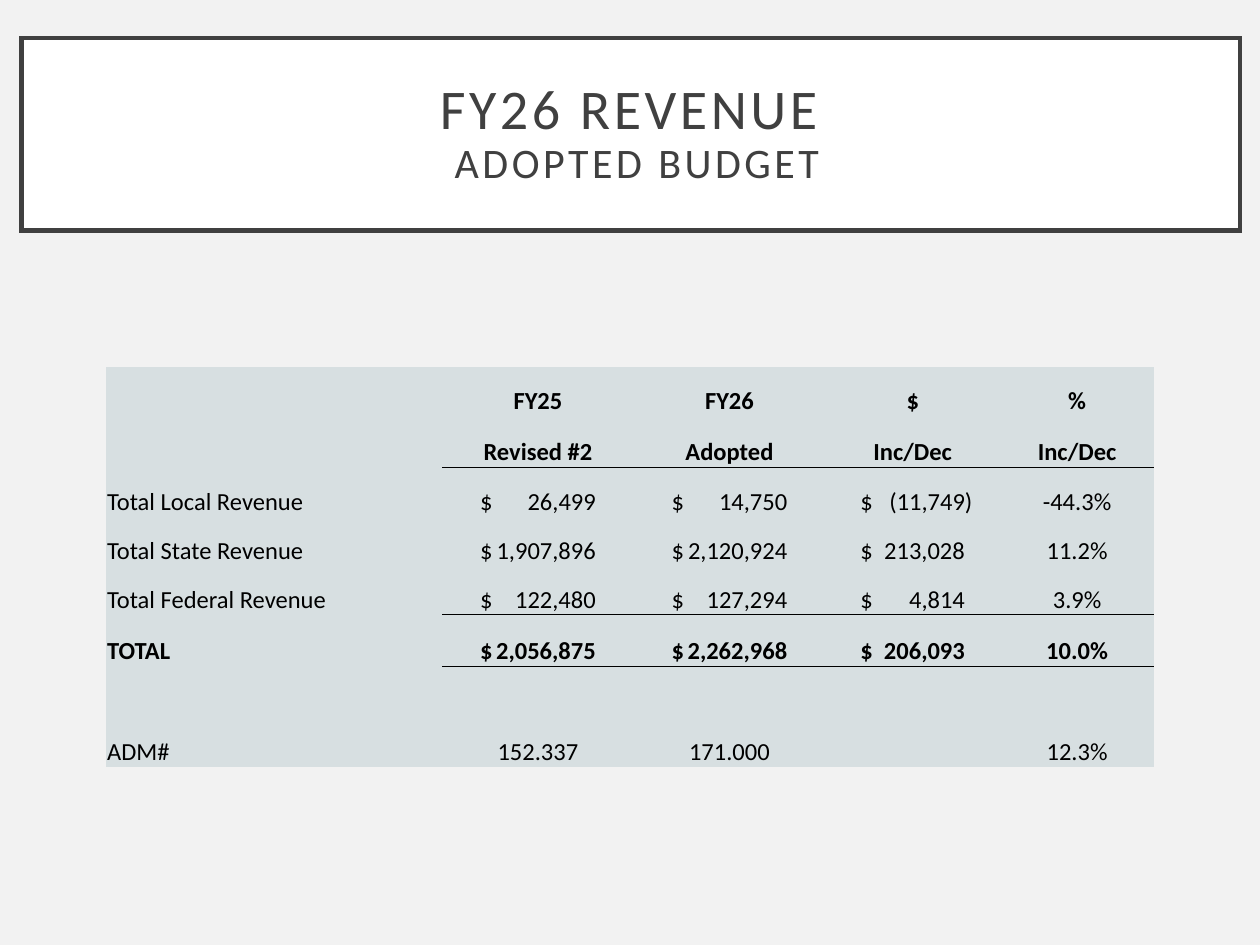
"""Build the FY26 adopted revenue budget slide."""
from dataclasses import dataclass

from lxml.etree import SubElement
from pptx import Presentation
from pptx.dml.color import RGBColor
from pptx.enum.shapes import MSO_SHAPE
from pptx.enum.text import MSO_ANCHOR, PP_ALIGN
from pptx.oxml.ns import qn
from pptx.util import Inches, Pt

BACKGROUND = RGBColor(0xF2, 0xF2, 0xF2)
WHITE = RGBColor(0xFF, 0xFF, 0xFF)
CHARCOAL = RGBColor(0x40, 0x40, 0x40)
BLACK = RGBColor(0x00, 0x00, 0x00)
PALE_TEAL = RGBColor(0xD7, 0xDF, 0xE1)
FONT = "Calibri"
HANGING_PARENTHESIS = 0.06


@dataclass(frozen=True)
class Column:
    width: float
    money_inset: float = 0.01


@dataclass(frozen=True)
class Row:
    values: tuple[str, ...]
    height: float = 0.39
    bold: bool = False
    rule_below: bool = False


COLUMNS = (Column(2.67), Column(1.52, 0.3), Column(1.52, 0.3), Column(1.39, 0.28), Column(1.22))
ROWS = (
    Row(("", "FY25", "FY26", "$", "%"), bold=True),
    Row(("", "Revised #2", "Adopted", "Inc/Dec", "Inc/Dec"), 0.41, bold=True, rule_below=True),
    Row(("Total Local Revenue", "$\t26,499", "$\t14,750", "$\t(11,749)", "-44.3%")),
    Row(("Total State Revenue", "$\t1,907,896", "$\t2,120,924", "$\t213,028", "11.2%")),
    Row(("Total Federal Revenue", "$\t122,480", "$\t127,294", "$\t4,814", "3.9%"), rule_below=True),
    Row(("TOTAL", "$\t2,056,875", "$\t2,262,968", "$\t206,093", "10.0%"), 0.41, bold=True, rule_below=True),
    Row(("", "", "", "", ""), 0.41),
    Row(("ADM#", "152.337", "171.000", "", "12.3%")),
)


def write(p, text: str, *, size: float = 14, bold: bool = False,
          color: RGBColor = BLACK, spacing: float = 0) -> None:
    r = p.add_run()
    r.text = text
    r.font.name = FONT
    r.font.size = Pt(size)
    r.font.bold = bold
    r.font.color.rgb = color
    if spacing:
        r._r.get_or_add_rPr().set("spc", str(int(spacing * 100)))


def add_title(s) -> None:
    sp = s.shapes.add_shape(MSO_SHAPE.RECTANGLE, Inches(0.17), Inches(0.3), Inches(9.67), Inches(1.53))
    sp.shadow.inherit = False
    sp.fill.solid()
    sp.fill.fore_color.rgb = WHITE
    sp.line.color.rgb = CHARCOAL
    sp.line.width = Pt(2.5)
    SubElement(sp.line._get_or_add_ln(), qn("a:miter"), lim="800000")
    tf = sp.text_frame
    tf.word_wrap = True
    tf.vertical_anchor = MSO_ANCHOR.MIDDLE
    tf.margin_left = tf.margin_right = tf.margin_top = tf.margin_bottom = Inches(0.2)
    p = tf.paragraphs[0]
    p.alignment = PP_ALIGN.CENTER
    p.line_spacing = 0.9
    write(p, "FY26 REVENUE", size=32, color=CHARCOAL, spacing=2)
    p.add_line_break()
    write(p, " ADOPTED BUDGET", size=24, color=CHARCOAL, spacing=2)


def set_borders(cell, ruled_sides: str) -> None:
    tcPr = cell._tc.get_or_add_tcPr()
    for side in "LRTB":
        ln = SubElement(tcPr, qn(f"a:ln{side}"), w=str(Pt(1)))
        if side in ruled_sides:
            fill = SubElement(ln, qn("a:solidFill"))
            SubElement(fill, qn("a:srgbClr"), val=str(BLACK))
        else:
            SubElement(ln, qn("a:noFill"))


def add_right_tab(p, position: float) -> None:
    tabs = SubElement(p._p.get_or_add_pPr(), qn("a:tabLst"))
    SubElement(tabs, qn("a:tab"), pos=str(Inches(position)), algn="r")


def fill_cell(cell, text: str, column: Column, *, bold: bool, label: bool, ruled_sides: str) -> None:
    money = "\t" in text
    set_borders(cell, ruled_sides)
    cell.fill.solid()
    cell.fill.fore_color.rgb = PALE_TEAL
    cell.vertical_anchor = MSO_ANCHOR.BOTTOM
    cell.margin_left = Inches(column.money_inset if money else 0.01)
    cell.margin_right = cell.margin_top = Inches(0.01)
    cell.margin_bottom = 0
    p = cell.text_frame.paragraphs[0]
    p.alignment = PP_ALIGN.LEFT if label or money else PP_ALIGN.CENTER
    if money:
        overhang = HANGING_PARENTHESIS if text.endswith(")") else 0
        add_right_tab(p, column.width - 2 * column.money_inset + overhang)
    if text:
        write(p, text, bold=bold)


def add_revenue_table(s) -> None:
    width = sum(column.width for column in COLUMNS)
    height = sum(row.height for row in ROWS)
    table = s.shapes.add_table(len(ROWS), len(COLUMNS), Inches(0.84), Inches(2.91),
                               Inches(width), Inches(height)).table
    table.first_row = table.horz_banding = False
    for i, column in enumerate(COLUMNS):
        table.columns[i].width = Inches(column.width)
    rule_above = False
    for i, row in enumerate(ROWS):
        table.rows[i].height = Inches(row.height)
        sides = ("T" if rule_above else "") + ("B" if row.rule_below else "")
        for j, (text, column) in enumerate(zip(row.values, COLUMNS)):
            fill_cell(table.cell(i, j), text, column, bold=row.bold, label=j == 0,
                      ruled_sides=sides if j else "")
        rule_above = row.rule_below


def main() -> None:
    prs = Presentation()
    prs.slide_width = Inches(10)
    prs.slide_height = Inches(7.5)
    s = prs.slides.add_slide(prs.slide_layouts[6])
    s.background.fill.solid()
    s.background.fill.fore_color.rgb = BACKGROUND
    add_title(s)
    add_revenue_table(s)
    prs.save("out.pptx")


if __name__ == "__main__":
    main()
